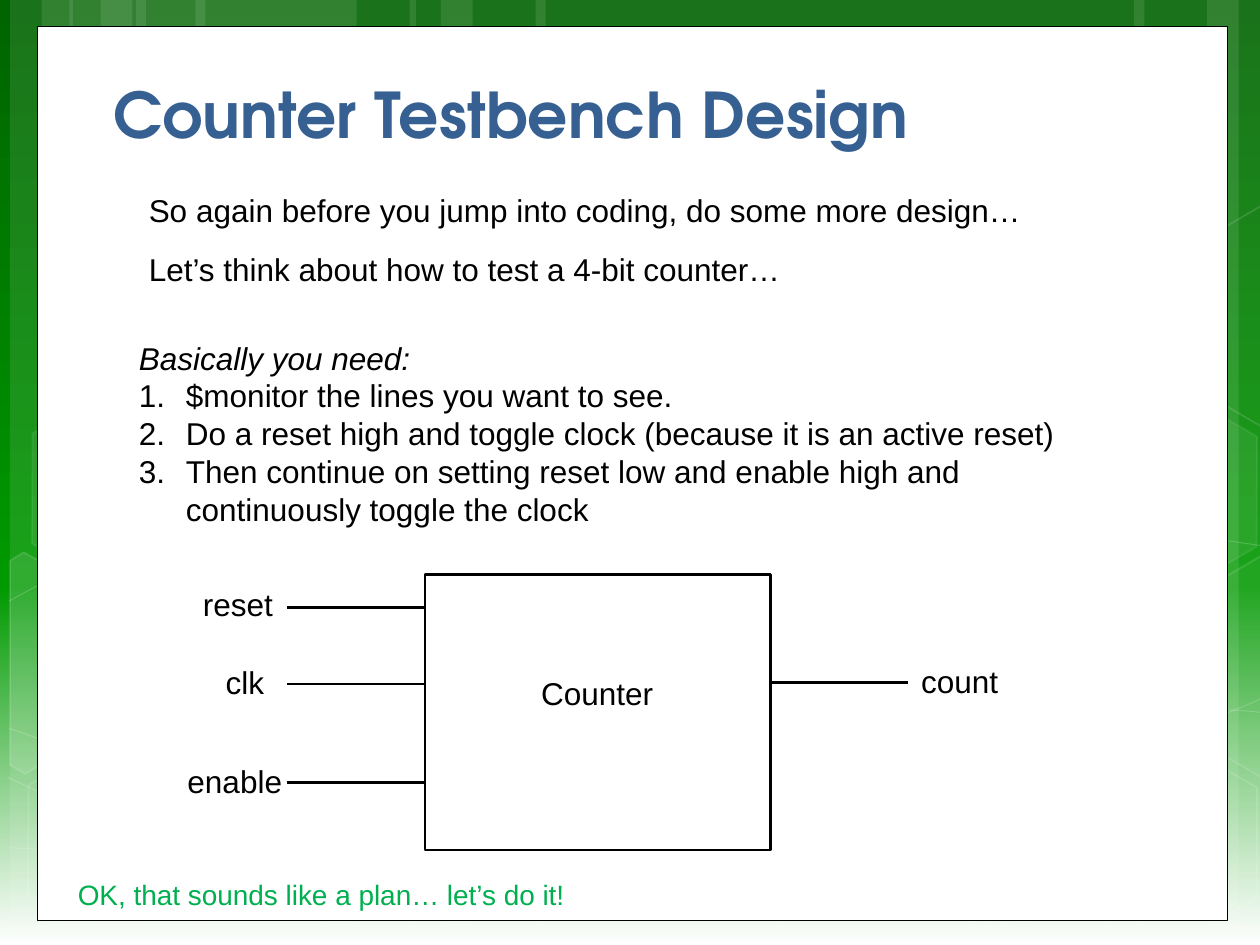
import math
from dataclasses import dataclass
from typing import NamedTuple, Optional

from lxml import etree
from pptx import Presentation
from pptx.dml.color import RGBColor
from pptx.enum import shapes, text
from pptx.oxml import ns
from pptx.util import Cm, Pt


@dataclass(frozen=True)
class Theme:
    heading_font: str = "TeX Gyre Adventor"
    body_font: str = "Arial"
    heading: str = "376092"
    ink: str = "000000"
    paper: str = "FFFFFF"
    accent: str = "00B050"
    gradient: tuple = ((0, "006400"), (62, "009900"), (100, "FFFFFF"))
    title_size: int = 36
    body_size: int = 18
    note_size: int = 16


class Box(NamedTuple):
    left: float
    top: float
    width: float
    height: float = 1.02


class Veil(NamedTuple):
    fill: Optional[int]
    line: Optional[int] = None
    line_width: float = 1


class Polygon(NamedTuple):
    center: tuple
    points: tuple
    veil: Veil


class Signal(NamedTuple):
    y: float
    start: float
    end: float
    name: str
    label: Box


class Caption(NamedTuple):
    words: str
    box: Box
    size: int = 18
    color: str = "000000"


THEME = Theme()
SLIDE_WIDTH, SLIDE_HEIGHT = 25.4, 19.05
TILT = 30
STRIPES = ((2.74, 4.45), (0.2, 1.27), (0.84, 2.11), (3.94, 4.45), (1.4, 1.27), (2.03, 2.11),
           (18.62, 4.45), (24.33, 1.27), (22.86, 2.11), (10.8, 7.82), (8.26, 1.27), (8.89, 2.11))
CURVES = (
    ((0.18, 17.09), (1.55, 17.17), (2.92, 17.25), (4.83, 17.22), (6.73, 17.2), (9.09, 17.15), (11.63, 16.89),
     (14.17, 16.64), (17.78, 16.15), (20.12, 15.67), (22.43, 15.19), (24.82, 14.43), (25.58, 14)),
    ((0.18, 12.12), (0.91, 11.71), (1.65, 11.33), (3.07, 10.95), (4.52, 10.57), (6.58, 10.01), (8.81, 9.83),
     (11.07, 9.65), (13.82, 9.63), (16.61, 9.83), (19.41, 10.03), (24.05, 10.82), (25.58, 11.02)),
    ((0.15, 15.67), (3.23, 17.07), (6.27, 18.47), (8.48, 19.02)),
    ((0.18, 14.68), (0.97, 14.96), (1.78, 15.24), (3.25, 15.65), (4.72, 16.03), (6.93, 16.66), (9.07, 17.09),
     (11.18, 17.53), (13.84, 17.98), (15.95, 18.24), (18.06, 18.52), (20.32, 18.62), (21.67, 18.69),
     (22.99, 18.8), (23.34, 18.75), (24, 18.75), (24.66, 18.72), (25.12, 18.67), (25.58, 18.64)),
    ((6.15, 19.02), (6.6, 18.52), (7.06, 18.01), (7.67, 17.55), (8.28, 17.09), (9.14, 16.59), (9.86, 16.23),
     (10.57, 15.88), (11, 15.72), (11.94, 15.47), (12.88, 15.21), (14.55, 14.86), (15.44, 14.68),
     (16.36, 14.5), (16.48, 14.5), (17.27, 14.45), (18.06, 14.38), (19.3, 14.3), (20.17, 14.27),
     (21.06, 14.25), (22.5, 14.27), (22.5, 14.27), (23.07, 14.27), (23.64, 14.27), (24.21, 14.27),
     (24.66, 14.3), (25.1, 14.33), (25.32, 14.35), (25.55, 14.38), (25.48, 14.35), (25.55, 14.38)),
)
HEXAGONS = (
    (8.48, 0.91, Veil(4, 8)), (12.62, 14.96, Veil(6, 12)), (0.28, 15.01, Veil(None, 12)),
    (0.36, 7.92, Veil(7, 8)), (4.42, 15.04, Veil(None, 12)), (21.18, 15.06, Veil(None, 12)),
    (21.18, 7.98, Veil(7, 8)),
)
POLYGONS = (
    Polygon((0.91, 13.59), ((0.2, 11.3), (0.48, 11.13), (2.44, 12.24), (2.41, 14.48), (0.51, 15.6),
                            (0.2, 15.42)), Veil(10, 12)),
    Polygon((25.02, 13.21), ((23.52, 12.32), (25.43, 11.2), (25.63, 11.33), (25.63, 15.57), (25.45, 15.67),
                             (23.52, 14.55)), Veil(4, 12)),
    Polygon((25.02, 6.12), ((23.52, 5.26), (25.43, 4.14), (25.65, 4.27), (25.63, 8.51), (25.45, 8.61),
                            (23.52, 7.49)), Veil(None, 12)),
)
PANEL = Box(0.76, 0.53, 23.98, 18.02)
COUNTER = Box(8.57, 11.58, 6.96, 5.56)
SIGNALS = (
    Signal(12.25, 5.79, COUNTER.left, "reset", Box(3.84, 11.67, 1.93)),
    Signal(13.79, 5.79, COUNTER.left, "clk", Box(4.3, 13.25, 1.3)),
    Signal(13.76, COUNTER.left + COUNTER.width, 18.31, "count", Box(18.32, 13.22, 2.08)),
    Signal(15.77, 5.79, COUNTER.left, "enable", Box(3.53, 15.24, 2.44)),
)
CAPTIONS = (
    Caption("So again before you jump into coding, do some more design…", Box(2.75, 3.73, 18.26)),
    Caption("Let’s think about how to test a 4-bit counter…", Box(2.75, 4.92, 13.36)),
    Caption("Counter", Box(10.66, 13.46, 2.79)),
    Caption("OK, that sounds like a plan… let’s do it!", Box(1.32, 17.57, 10.36, 0.94),
            THEME.note_size, THEME.accent),
)
TITLE = Caption("Counter Testbench Design", Box(2.03, 1.24, 21.39, 1.93), THEME.title_size, THEME.heading)
STEPS = Caption("""Basically you need:
$monitor the lines you want to see.
Do a reset high and toggle clock (because it is an active reset)
Then continue on setting reset low and enable high and continuously toggle the clock""",
                Box(2.55, 6.7, 19.86, 4.11))


def paint(fill, color: str, opacity: int = 100) -> None:
    fill.solid()
    fill.fore_color.rgb = RGBColor.from_string(color)
    if opacity < 100:
        color_element = fill._xPr.find(ns.qn("a:solidFill"))[0]
        etree.SubElement(color_element, ns.qn("a:alpha"), val=str(opacity * 1000))


def apply_veil(shape, veil: Veil) -> None:
    shape.shadow.inherit = False
    for fill, opacity in ((shape.fill, veil.fill), (shape.line.fill, veil.line)):
        if opacity is None:
            fill.background()
        else:
            paint(fill, THEME.paper, opacity)
    if veil.line is not None:
        shape.line.width = Pt(veil.line_width)


def draw_background(slide) -> None:
    fill = slide.background.fill
    fill.gradient()
    fill.gradient_angle = 270
    stops = slide._element.find(".//" + ns.qn("a:gsLst"))
    for stop in list(stops):
        stops.remove(stop)
    for position, color in THEME.gradient:
        stop = etree.SubElement(stops, ns.qn("a:gs"), pos=str(position * 1000))
        etree.SubElement(stop, ns.qn("a:srgbClr"), val=color)


def draw_outline(slide, points, veil: Veil, close: bool):
    corners = [(Cm(x), Cm(y)) for x, y in points]
    builder = slide.shapes.build_freeform(*corners[0], scale=1.0)
    builder.add_line_segments(corners[1:], close=close)
    shape = builder.convert_to_shape()
    apply_veil(shape, veil)
    return shape


def draw_curve(slide, points) -> None:
    shape = draw_outline(slide, points, Veil(None, 20, 0.5), False)
    segments = list(shape._element.iter(ns.qn("a:lnTo")))
    for first in range(0, len(segments), 3):
        bezier = etree.SubElement(segments[first].getparent(), ns.qn("a:cubicBezTo"))
        for segment in segments[first:first + 3]:
            bezier.append(segment[0])
            segment.getparent().remove(segment)


def draw_polygon(slide, polygon: Polygon) -> None:
    center_x, center_y = polygon.center
    cosine, sine = math.cos(math.radians(TILT)), math.sin(math.radians(TILT))
    offsets = [(x - center_x, y - center_y) for x, y in polygon.points]
    upright = [(center_x + x * cosine + y * sine, center_y + y * cosine - x * sine) for x, y in offsets]
    draw_outline(slide, upright, polygon.veil, True).rotation = TILT


def draw_decoration(slide) -> None:
    for left, width in STRIPES:
        box = Box(left, 0, width, SLIDE_HEIGHT)
        apply_veil(slide.shapes.add_shape(shapes.MSO_SHAPE.RECTANGLE, *map(Cm, box)), Veil(10))
    for curve in CURVES:
        draw_curve(slide, curve)
    for left, top, veil in HEXAGONS:
        hexagon = slide.shapes.add_shape(shapes.MSO_SHAPE.HEXAGON, *map(Cm, (left, top, 4.45, 3.86)))
        hexagon.adjustments[0] = 0.285
        hexagon.rotation = TILT
        apply_veil(hexagon, veil)
    for polygon in POLYGONS:
        draw_polygon(slide, polygon)


def draw_frame(slide, box: Box, line_width: float) -> None:
    frame = slide.shapes.add_shape(shapes.MSO_SHAPE.RECTANGLE, *map(Cm, box))
    frame.shadow.inherit = False
    paint(frame.fill, THEME.paper)
    paint(frame.line.fill, THEME.ink)
    frame.line.width = Pt(line_width)


def add_text(slide, caption: Caption, font: str = THEME.body_font, wrap: bool = False):
    frame = slide.shapes.add_textbox(*map(Cm, caption.box)).text_frame
    frame.text = caption.words
    frame.word_wrap = wrap
    frame.auto_size = text.MSO_AUTO_SIZE.SHAPE_TO_FIT_TEXT
    for paragraph in frame.paragraphs:
        run_font = paragraph.runs[0].font
        run_font.name, run_font.size = font, Pt(caption.size)
        run_font.color.rgb = RGBColor.from_string(caption.color)
    return frame


def draw_title(slide) -> None:
    frame = add_text(slide, TITLE, THEME.heading_font, True)
    frame.auto_size = text.MSO_AUTO_SIZE.NONE
    frame.vertical_anchor = text.MSO_ANCHOR.BOTTOM
    frame.paragraphs[0].runs[0].font.bold = True


def draw_signal(slide, signal: Signal) -> None:
    ends = map(Cm, (signal.start, signal.y, signal.end, signal.y))
    wire = slide.shapes.add_connector(shapes.MSO_CONNECTOR.STRAIGHT, *ends)
    paint(wire.line.fill, THEME.ink)
    wire.line.width = Pt(1.5)
    etree.SubElement(wire._element.spPr, ns.qn("a:effectLst"))
    add_text(slide, Caption(signal.name, signal.label))


def draw_steps(slide) -> None:
    heading, *steps = add_text(slide, STEPS, wrap=True).paragraphs
    heading.runs[0].font.italic = True
    for step in steps:
        properties = step._p.get_or_add_pPr()
        properties.set("marL", str(Cm(0.95)))
        properties.set("indent", str(-Cm(0.95)))
        etree.SubElement(properties, ns.qn("a:buAutoNum"), type="arabicPeriod")


presentation = Presentation()
presentation.slide_width, presentation.slide_height = Cm(SLIDE_WIDTH), Cm(SLIDE_HEIGHT)
slide = presentation.slides.add_slide(presentation.slide_layouts[6])
draw_background(slide)
draw_decoration(slide)
draw_frame(slide, PANEL, 0.5)
draw_title(slide)
draw_frame(slide, COUNTER, 1.5)
for signal in SIGNALS:
    draw_signal(slide, signal)
for caption in CAPTIONS:
    add_text(slide, caption)
draw_steps(slide)
presentation.save("out.pptx")
